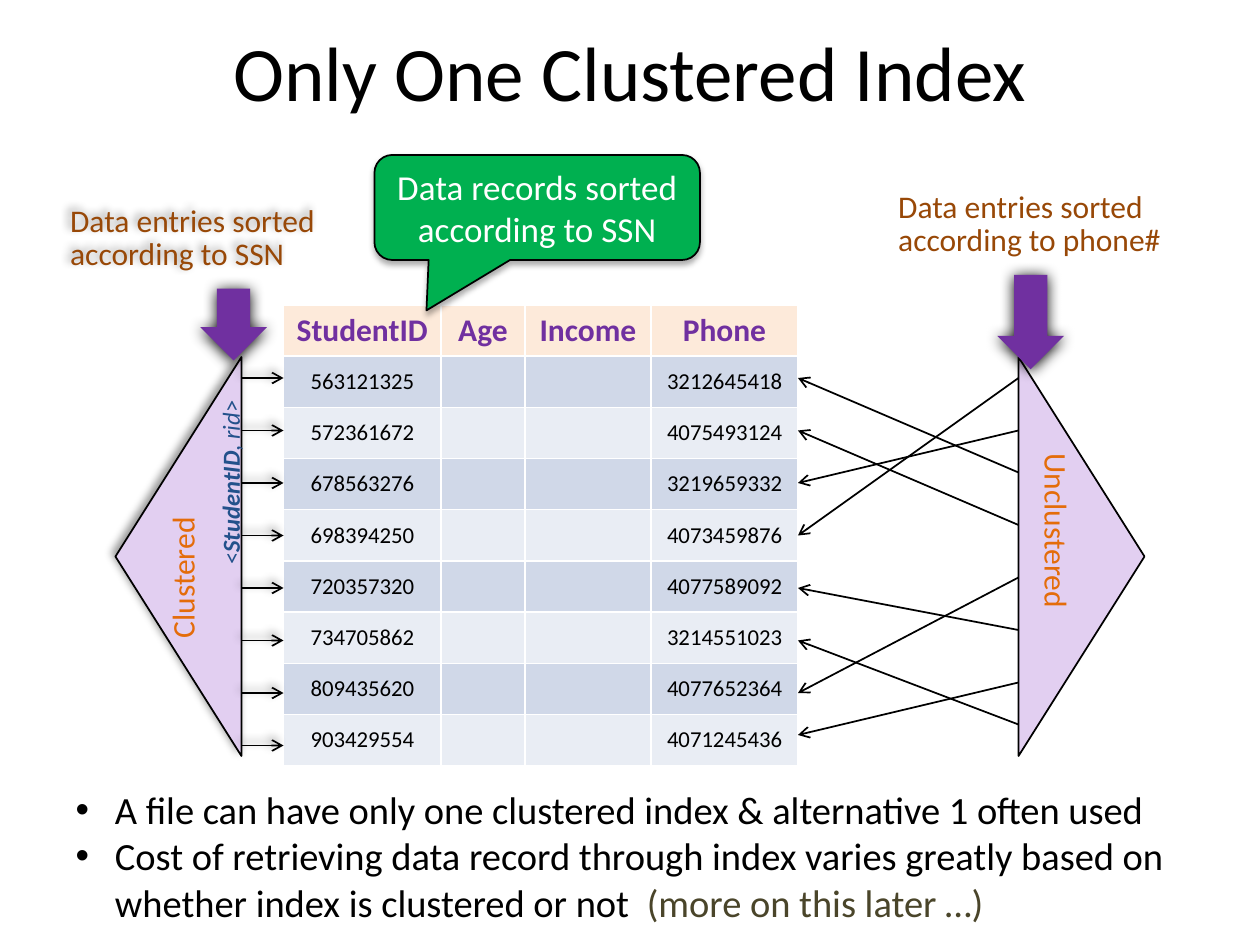
"""Builds a slide that contrasts a clustered and an unclustered index."""
from lxml.etree import SubElement as Sub
from pptx import Presentation
from pptx.dml.color import RGBColor
from pptx.enum.shapes import MSO_CONNECTOR as Link, MSO_SHAPE as Form
from pptx.enum.text import MSO_ANCHOR as Anchor, MSO_AUTO_SIZE as Fit, PP_ALIGN as Align
from pptx.oxml.ns import qn
from pptx.util import Pt

BLACK = RGBColor(0x00, 0x00, 0x00)
WHITE = RGBColor(0xFF, 0xFF, 0xFF)
PURPLE = RGBColor(0x70, 0x30, 0xA0)
LILAC = RGBColor(0xE2, 0xCF, 0xF1)
GREEN = RGBColor(0x00, 0xB0, 0x50)
BROWN = RGBColor(0x98, 0x48, 0x07)
ORANGE = RGBColor(0xE4, 0x6C, 0x0A)
BLUE = RGBColor(0x23, 0x51, 0x8B)
OLIVE = RGBColor(0x4A, 0x45, 0x2A)
PEACH = RGBColor(0xFD, 0xEA, 0xDA)
BANDS = RGBColor(0xE9, 0xED, 0xF4), RGBColor(0xD0, 0xD8, 0xE8)

SOFT = 40, 5, 3, 225
DARK = 100, 8.5, 1, 90
DROP = 32, 3.5, 2.2, 90

HEADS = "StudentID", "Age", "Income", "Phone"
ROWS = (
    ("563121325", "3212645418"), ("572361672", "4075493124"),
    ("678563276", "3219659332"), ("698394250", "4073459876"),
    ("720357320", "4077589092"), ("734705862", "3214551023"),
    ("809435620", "4077652364"), ("903429554", "4071245436"),
)
LINKS = (
    (216, 306), (246, 276), (270, 216), (300, 246),
    (330, 396), (360, 336), (390, 420), (414, 366),
)


def put(item, vals):
    for key, val in vals.items():
        setattr(item, key, val)


class Deck:
    def __init__(self):
        self.show = Presentation()
        put(self.show, {"slide_width": Pt(720), "slide_height": Pt(540)})
        self.slide = self.show.slides.add_slide(self.show.slide_layouts[1])
        self.font = "Calibri"

    def words(self, frame, paras, size, color, form=None):
        for num, runs in enumerate(paras):
            para = frame.add_paragraph() if num else frame.paragraphs[0]
            put(para, form or {})
            for text, vals in runs:
                run = para.add_run()
                run.text = text
                look = {"name": self.font, "size": Pt(size), **vals}
                run.font.color.rgb = look.pop("color", color)
                put(run.font, look)

    def shade(self, props, cast):
        glow = props.find(qn("a:effectLst"))
        if glow is None:
            glow = Sub(props, qn("a:effectLst"))
        if cast:
            alpha, blur, dist, turn = cast
            drop = Sub(glow, qn("a:outerShdw"), blurRad=str(Pt(blur)), dist=str(Pt(dist)),
                       dir=str(turn * 60000), rotWithShape="0")
            tint = Sub(drop, qn("a:srgbClr"), val="000000")
            Sub(tint, qn("a:alpha"), val=str(alpha * 1000))

    def holder(self, slot, box, paras, size, form, anchor):
        item = self.slide.placeholders[slot]
        put(item, dict(zip(("left", "top", "width", "height"), map(Pt, box))))
        put(item.text_frame, {"auto_size": Fit.NONE, "vertical_anchor": anchor})
        self.words(item.text_frame, paras, size, BLACK, form)
        return item

    def points(self, box, paras, size, dent):
        item = self.holder(1, box, paras, size, {"space_before": Pt(0)}, Anchor.TOP)
        for para in item.text_frame.paragraphs:
            props = para._p.get_or_add_pPr()
            props.set("marL", str(Pt(dent)))
            props.set("indent", str(-Pt(dent)))

    def shape(self, kind, box, fill, line=None, cast=None, turn=0):
        item = self.slide.shapes.add_shape(kind, *map(Pt, box))
        item.rotation = turn
        item.fill.solid()
        item.fill.fore_color.rgb = fill
        if line is None:
            item.line.fill.background()
        else:
            item.line.color.rgb = line
            item.line.width = Pt(1)
        item.shadow.inherit = False
        self.shade(item._element.spPr, cast)
        return item

    def bubble(self, box, text, tail):
        item = self.shape(Form.ROUNDED_RECTANGULAR_CALLOUT, box, GREEN, BLACK, DROP)
        for num, val in enumerate(tail):
            item.adjustments[num] = val
        put(item.text_frame, {"word_wrap": True, "margin_left": 0, "margin_right": 0,
                              "vertical_anchor": Anchor.MIDDLE})
        form = {"alignment": Align.CENTER, "line_spacing": Pt(24)}
        self.words(item.text_frame, [[(text, {})]], 20, WHITE, form)

    def label(self, box, paras, size, color, turn=0, wrap=False, form=None, cast=None):
        item = self.slide.shapes.add_textbox(*map(Pt, box))
        item.rotation = turn
        put(item.text_frame, {"word_wrap": wrap, "auto_size": Fit.SHAPE_TO_FIT_TEXT})
        self.words(item.text_frame, paras, size, color, form)
        if cast:
            self.shade(item._element.spPr, cast)

    def arrow(self, start, end, cast=None):
        item = self.slide.shapes.add_connector(Link.STRAIGHT, *map(Pt, start + end))
        item.line.color.rgb = BLACK
        item.line.width = Pt(1)
        Sub(item.line._get_or_add_ln(), qn("a:tailEnd"), type="arrow")
        self.shade(item._element.spPr, cast)

    def table(self, box, wides, rows):
        grid = self.slide.shapes.add_table(len(rows), len(wides), *map(Pt, box)).table
        for col, wide in zip(grid.columns, wides):
            col.width = Pt(wide)
        for num, row in enumerate(rows):
            grid.rows[num].height = Pt(box[3] / len(rows))
            for cell, text in zip(grid.rows[num].cells, row):
                cell.fill.solid()
                cell.fill.fore_color.rgb = BANDS[num % 2] if num else PEACH
                cell.vertical_anchor = Anchor.MIDDLE
                if text:
                    size, color = (13, BLACK) if num else (18, PURPLE)
                    runs = [[(text, {"bold": num == 0})]]
                    self.words(cell.text_frame, runs, size, color, {"alignment": Align.CENTER})


def main():
    deck = Deck()
    tight = {"line_spacing": Pt(19)}
    deck.holder(0, (54, 8.64, 612, 63.36), [[("Only One Clustered Index", {})]], 44,
                {"alignment": Align.CENTER}, Anchor.MIDDLE)
    deck.points((36, 445.68, 648, 87.12), [
        [("A file can have only one clustered index & alternative 1 often used", {})],
        [("Cost of retrieving data record through index varies greatly based on "
          "whether index is clustered or not  ", {}),
         ("(more on this later …)", {"color": OLIVE})],
    ], 22, 22.5)
    deck.table((162, 174.24, 294, 263.52), (90, 48, 72, 84),
               [HEADS] + [(key, "", "", phone) for key, phone in ROWS])

    deck.shape(Form.ISOSCELES_TRIANGLE, (-12, 282, 228, 72), LILAC, BLACK, SOFT, 270)
    for num in range(len(ROWS)):
        high = 216 + 30 * num
        deck.arrow((138, high), (162, high), SOFT)
    deck.shape(Form.DOWN_ARROW, (114.5, 165, 38, 41), PURPLE, cast=DARK)
    deck.label((33, 113.76, 157.68, 45.36), [[("Data entries sorted according to SSN", {})]],
               18, BROWN, wrap=True, form=tight, cast=SOFT)
    deck.label((54, 299.5, 108, 36.72), [[("Clustered", {})]], 18, ORANGE, 270)

    deck.shape(Form.ISOSCELES_TRIANGLE, (504, 282, 228, 72), LILAC, BLACK, turn=90)
    for start, end in LINKS:
        deck.arrow((582, start), (456, end))
    deck.shape(Form.DOWN_ARROW, (570, 157, 38, 54), PURPLE, cast=DARK)
    deck.label((506.16, 105.84, 166.32, 45.36),
               [[("Data entries sorted", {})], [("according to phone#", {})]],
               18, BROWN, form=tight)
    deck.label((533.5, 300.24, 133.2, 36.72), [[("Unclustered", {})]], 18, ORANGE, 90)

    deck.bubble((214, 88.56, 186, 60), "Data records sorted according to SSN",
                (-0.34, 0.98, 0.17))
    deck.label((75.6, 261.36, 112.32, 24.48), [[
        ("<", {}), ("StudentID", {"bold": True, "italic": True}), (", ", {}),
        ("rid", {"italic": True}), (">", {}),
    ]], 14, BLUE, 270)
    deck.show.save("out.pptx")


if __name__ == "__main__":
    main()
